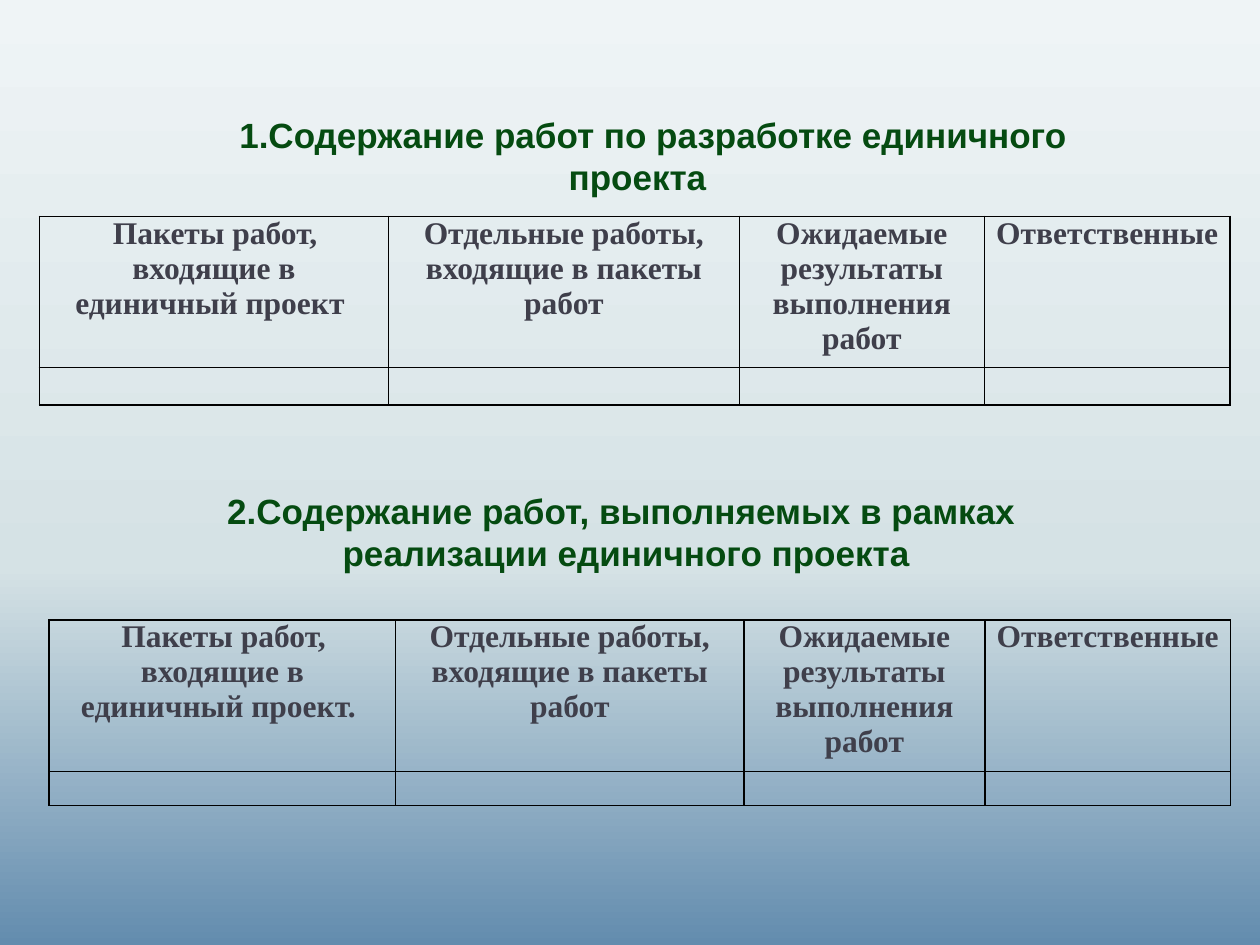
import copy
from dataclasses import dataclass
import pptx
import pptx.util
import pptx.dml.color
import pptx.enum.text
import pptx.oxml.ns
import lxml.etree

Pt = pptx.util.Pt
RGB = pptx.dml.color.RGBColor.from_string
qn = pptx.oxml.ns.qn
CENTER = pptx.enum.text.PP_ALIGN.CENTER


@dataclass
class Theme:
    sky: tuple = ((0, "638CAE"), (0.4, "D5E2E5"), (1, "EFF4F6"))
    head: tuple = ("Arial", 20, "054B11")
    cell: tuple = ("Times New Roman", 18, "3F3F4B")
    line: str = "000000"
    blank: int = 12


theme = Theme()


def write(para, text, style, indent=0):
    """Add one bold centred run with an optional first-line indent."""
    para.alignment = CENTER
    if indent:
        para._p.get_or_add_pPr().set("indent", str(Pt(indent)))
    run = para.add_run()
    run.text = text
    font = run.font
    font.name, font.size, font.bold = style[0], Pt(style[1]), True
    font.color.rgb = RGB(style[2])


def border(cell):
    """Draw a 1 pt line on all four sides of a cell."""
    props = cell._tc.get_or_add_tcPr()
    for side in ("lnL", "lnR", "lnT", "lnB"):
        line = lxml.etree.SubElement(props, qn("a:" + side), w=str(Pt(1)))
        fill = lxml.etree.SubElement(line, qn("a:solidFill"))
        lxml.etree.SubElement(fill, qn("a:srgbClr"), val=theme.line)


deck = pptx.Presentation()
deck.slide_width, deck.slide_height = Pt(720), Pt(540)
slide = deck.slides.add_slide(deck.slide_layouts[6])

# Background: three-stop gradient rising from the bottom
fill = slide.background.fill
fill.gradient()
fill.gradient_angle = 90
stops = slide.element.find(".//" + qn("a:gsLst"))
stops.insert(1, copy.deepcopy(stops[0]))
for stop, (place, color) in zip(fill.gradient_stops, theme.sky):
    stop.position = place
    stop.color.rgb = RGB(color)

# Headings: left, top, width, lines
heads = [
    (95, 61, 538.6, ["1.Содержание работ по разработке единичного проекта"]),
    (67.7, 275.8, 562.3, ["2.Содержание работ, выполняемых в рамках ",
                          "реализации единичного проекта"]),
]
for left, top, width, lines in heads:
    box = slide.shapes.add_textbox(Pt(left), Pt(top), Pt(width), Pt(55.4))
    frame = box.text_frame
    frame.word_wrap = True
    frame.vertical_anchor = pptx.enum.text.MSO_ANCHOR.MIDDLE
    for num, text in enumerate(lines):
        para = frame.add_paragraph() if num else frame.paragraphs[0]
        write(para, text, theme.head, 18)

# Tables: left, top, column widths, row heights, first label
labels = ["Отдельные работы, входящие в пакеты работ",
          "Ожидаемые результаты выполнения работ", "Ответственные"]
grids = [
    (22.5, 123.7, (199.5, 200.5, 140, 140.5), (86.4, 21.4),
     "Пакеты работ, входящие в единичный проект "),
    (28.1, 354.2, (198, 199, 137.7, 140.5), (86.6, 19.4),
     "Пакеты работ, входящие в единичный проект. "),
]
for left, top, cols, rows, first in grids:
    table = slide.shapes.add_table(
        len(rows), len(cols), Pt(left), Pt(top), Pt(sum(cols)), Pt(sum(rows))).table
    table.first_row = table.horz_banding = False
    for col, width in zip(table.columns, cols):
        col.width = Pt(width)
    for row, height in zip(table.rows, rows):
        row.height = Pt(height)
    for cell in table.iter_cells():
        cell.margin_left = cell.margin_right = Pt(5)
        cell.margin_top = cell.margin_bottom = 0
        border(cell)
        cell.fill.background()
    for num, text in enumerate([first] + labels):
        write(table.cell(0, num).text_frame.paragraphs[0], text,
              theme.cell, 0 if num else 1.4)
        # A small end mark keeps the empty row low
        para = table.cell(1, num).text_frame.paragraphs[0]
        lxml.etree.SubElement(para._p, qn("a:endParaRPr"), sz=str(theme.blank * 100))

deck.save("out.pptx")
